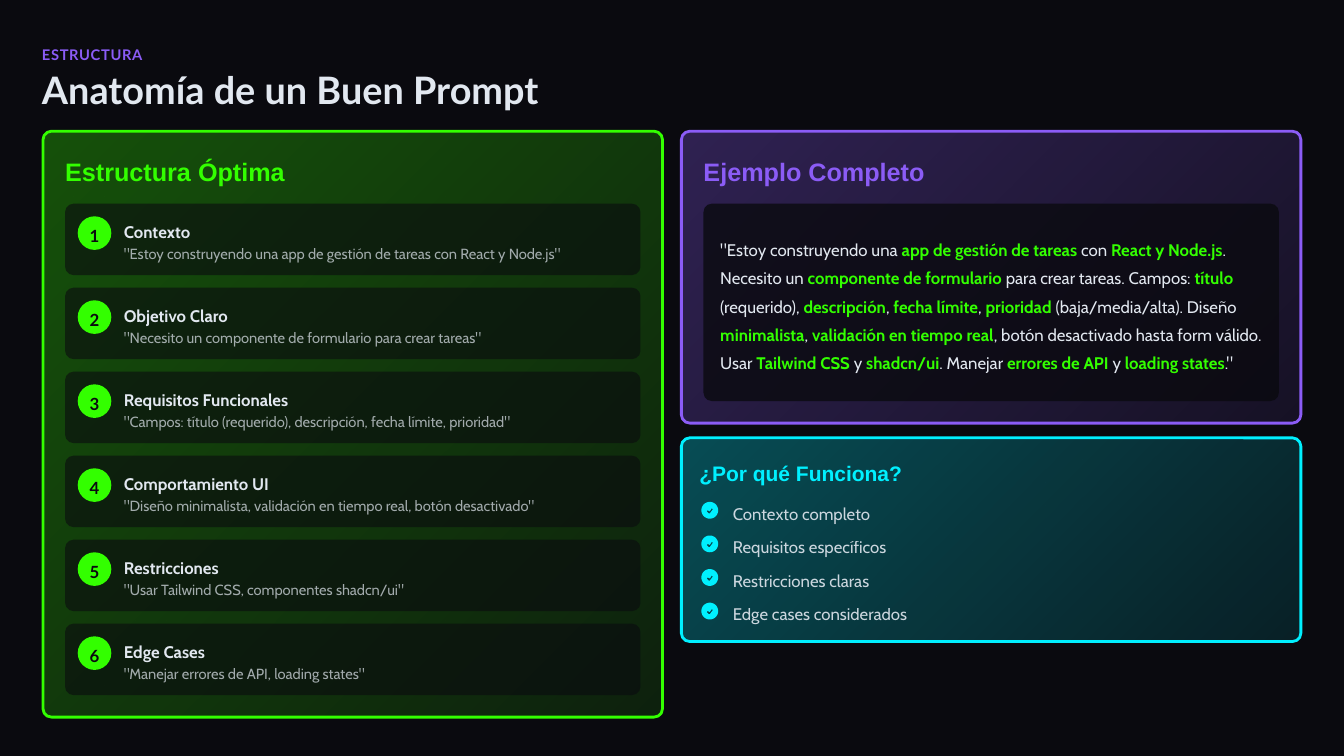
import math
from pptx import Presentation
from pptx import util as u
from pptx.dml.color import RGBColor
from pptx.enum import shapes, text
from pptx.oxml import ns
from lxml import etree

PX = 9525
BG = RGBColor(0x0A, 0x0A, 0x0F)
INK = RGBColor(0xE2, 0xE8, 0xF0)
GREEN = RGBColor(0x33, 0xFF, 0x00)
PURPLE = RGBColor(0x8B, 0x5C, 0xF6)
CYAN = RGBColor(0x00, 0xF0, 0xFF)
MIDDLE = text.MSO_ANCHOR.MIDDLE
RADIUS = 8
CARD_W = 548
TICK = [(3, -1), (0, 3), (-1, 3), (-3, 1), (-2, 0), (0, 1), (2, -2)]

STEPS = [
    ("Contexto", '"Estoy construyendo una app de gestión de tareas con React y Node.js"'),
    ("Objetivo Claro", '"Necesito un componente de formulario para crear tareas"'),
    ("Requisitos Funcionales", '"Campos: título (requerido), descripción, fecha límite, prioridad"'),
    ("Comportamiento UI", '"Diseño minimalista, validación en tiempo real, botón desactivado"'),
    ("Restricciones", '"Usar Tailwind CSS, componentes shadcn/ui"'),
    ("Edge Cases", '"Manejar errores de API, loading states"'),
]
EXAMPLE = (
    '"Estoy construyendo una |app de gestión de tareas| con |React y Node.js|. Necesito un '
    '|componente de formulario| para crear tareas. Campos: |título| (requerido), |descripción|, '
    '|fecha límite|, |prioridad| (baja/media/alta). Diseño |minimalista|, '
    '|validación en tiempo real|, botón desactivado hasta form válido. Usar |Tailwind CSS| y '
    '|shadcn/ui|. Manejar |errores de API| y |loading states|."'
)
REASONS = ["Contexto completo", "Requisitos específicos", "Restricciones claras",
           "Edge cases considerados"]


def set_alpha(element, *percents):
    for color, percent in zip(element.iter(ns.qn("a:srgbClr")), percents):
        etree.SubElement(color, ns.qn("a:alpha")).set("val", str(percent * 1000))


def write(sp, runs, size, font, spacing, align=text.PP_ALIGN.LEFT, alpha=None, tracking=None):
    tf = sp.text_frame
    tf.word_wrap = True
    tf.vertical_anchor = MIDDLE
    tf.margin_left = tf.margin_top = tf.margin_right = tf.margin_bottom = 0
    p = tf.paragraphs[0]
    p.alignment = align
    p.line_spacing = spacing
    for words, color, bold in runs:
        r = p.add_run()
        r.text = words
        r.font.size = u.Pt(size)
        r.font.name = font
        r.font.bold = bold
        r.font.color.rgb = color
        rPr = r._r.get_or_add_rPr()
        if alpha:
            set_alpha(rPr, alpha)
        if tracking:
            rPr.set("spc", str(tracking))


def add_text(s, x, y, w, h, words, size, font, color, spacing, bold=False, **style):
    sp = s.shapes.add_textbox(x * PX, y * PX, w * PX, h * PX)
    write(sp, [(words, color, bold)], size, font, spacing, **style)


def add_block(s, kind, x, y, w, h):
    sp = s.shapes.add_shape(kind, x * PX, y * PX, w * PX, h * PX)
    sp.shadow.inherit = False
    if kind == shapes.MSO_SHAPE.ROUNDED_RECTANGLE:
        sp.adjustments[0] = RADIUS / min(w, h)
    return sp


def add_panel(s, x, y, w, h, color):
    sp = add_block(s, shapes.MSO_SHAPE.ROUNDED_RECTANGLE, x, y, w, h)
    sp.fill.gradient()
    sp.fill.gradient_angle = 315
    for stop, position in zip(sp.fill.gradient_stops, (0, 1)):
        stop.color.rgb = color
        stop.position = position
    set_alpha(sp._element.spPr, 30, 10)
    sp.line.color.rgb = color
    sp.line.width = u.Pt(2)


def add_card(s, x, y, w, h, alpha):
    sp = add_block(s, shapes.MSO_SHAPE.ROUNDED_RECTANGLE, x, y, w, h)
    sp.fill.solid()
    sp.fill.fore_color.rgb = BG
    set_alpha(sp._element.spPr, alpha)
    sp.line.fill.background()


def add_check(s, cx, cy, radius):
    turns = [2 * math.pi * i / 48 for i in range(48)]
    rim = [((cx + radius * math.cos(t)) * PX, (cy + radius * math.sin(t)) * PX) for t in turns]
    tick = [((cx + dx) * PX, (cy + dy) * PX) for dx, dy in TICK]
    fb = s.shapes.build_freeform(*rim[0], scale=1.0)
    fb.add_line_segments(rim[1:], close=True)
    fb.move_to(*tick[0])
    fb.add_line_segments(tick[1:], close=True)
    sp = fb.convert_to_shape()
    sp.shadow.inherit = False
    sp.fill.solid()
    sp.fill.fore_color.rgb = CYAN
    sp.line.fill.background()


def header(s, x, y, w):
    add_text(s, x, y, w, 20, "ESTRUCTURA", 10.5, "Lato", PURPLE, 1.2, True, tracking=50)
    add_text(s, x, y + 28, w, 40, "Anatomía de un Buen Prompt", 27, "Lato", INK, 0.9, True)


def step(s, x, y, number, name, quote):
    add_card(s, x, y, CARD_W, 68, 60)
    badge = add_block(s, shapes.MSO_SHAPE.OVAL, x + 12, y + 12, 32, 32)
    badge.fill.solid()
    badge.fill.fore_color.rgb = GREEN
    badge.line.fill.background()
    write(badge, [(str(number), BG, True)], 12, "Lato", 1.3, text.PP_ALIGN.CENTER)
    add_text(s, x + 56, y + 12, 480, 24, name, 12, "Cabin", INK, 1.3, True)
    add_text(s, x + 56, y + 36, 480, 20, quote, 10.5, "Cabin", INK, 1.2, alpha=70)


def structure(s, x, y, w, h):
    add_panel(s, x, y, w, h, GREEN)
    add_text(s, x + 21, y + 21, 560, 32, "Estructura Óptima", 18, "Arial", GREEN, 1.1, True)
    for i, (name, quote) in enumerate(STEPS):
        step(s, x + 21, y + 69 + 80 * i, i + 1, name, quote)


def example(s, x, y, w, h):
    add_panel(s, x, y, w, h, PURPLE)
    add_text(s, x + 21, y + 21, 560, 32, "Ejemplo Completo", 18, "Arial", PURPLE, 1.1, True)
    add_card(s, x + 21, y + 69, CARD_W, 188, 80)
    sp = s.shapes.add_textbox((x + 37) * PX, (y + 85) * PX, 524 * PX, 156 * PX)
    runs = [(words, GREEN if i % 2 else INK, bool(i % 2))
            for i, words in enumerate(EXAMPLE.split("|"))]
    write(sp, runs, 12, "Cabin", 1.4)


def reasons(s, x, y, w, h):
    add_panel(s, x, y, w, h, CYAN)
    add_text(s, x + 17, y + 17, 566, 28, "¿Por qué Funciona?", 15, "Arial", CYAN, 1.2, True)
    for i, reason in enumerate(REASONS):
        top = y + 57 + 32 * i
        add_check(s, x + 27, top + 12, 8)
        add_text(s, x + 49, top, 200, 24, reason, 12, "Cabin", INK, 1.3, alpha=90)


def main():
    prs = Presentation()
    prs.slide_width = 1280 * PX
    prs.slide_height = 720 * PX
    s = prs.slides.add_slide(prs.slide_layouts[6])
    s.background.fill.solid()
    s.background.fill.fore_color.rgb = BG
    header(s, 40, 40, 1207)
    structure(s, 41, 125, 590, 558)
    example(s, 649, 125, 590, 278)
    reasons(s, 649, 417, 590, 194)
    prs.save("out.pptx")


if __name__ == "__main__":
    main()
